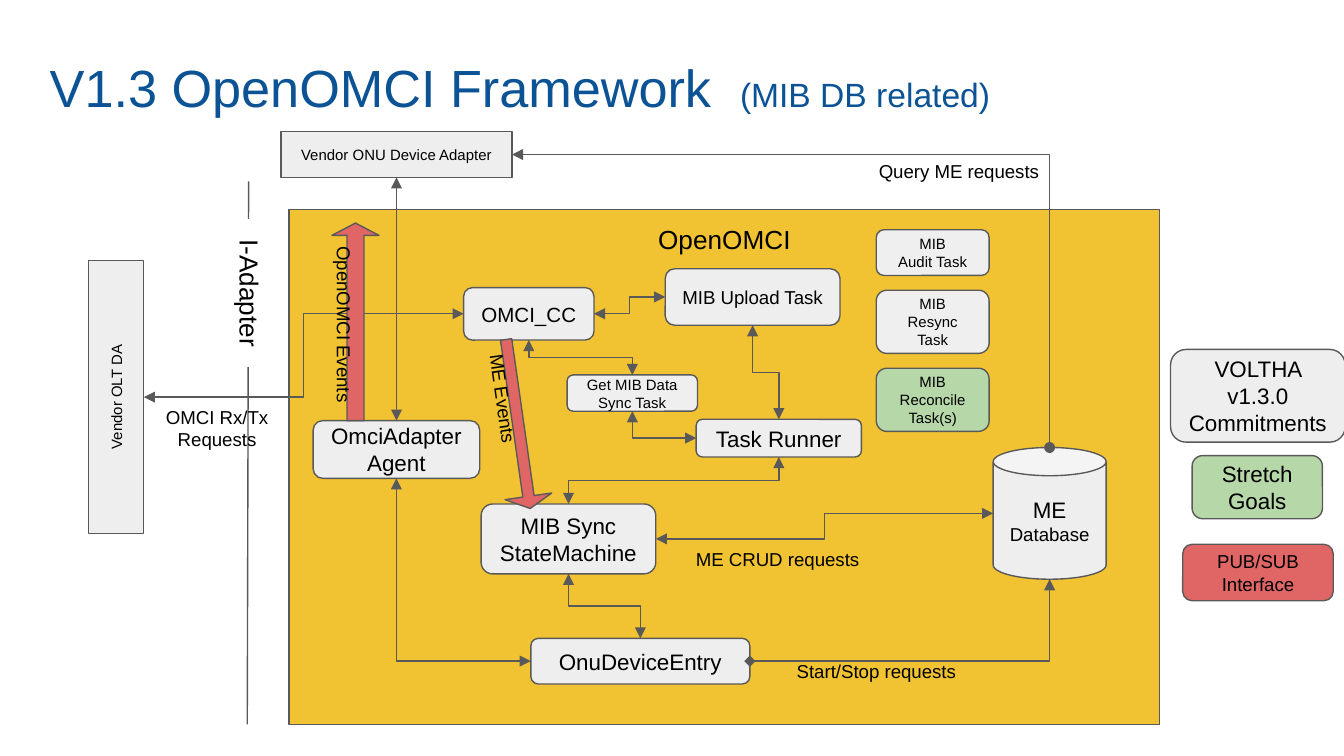
from typing import NamedTuple

from lxml import etree
from pptx import Presentation
from pptx import util as u
from pptx.dml.color import RGBColor
from pptx.enum import shapes, text
from pptx.oxml.ns import qn

COLS, ROWS = 100, 56.25
CELL = u.Inches(0.1)
FONT = "Arial"
COLORS = {"ink": "000000", "title": "0B5394", "line": "595959", "panel": "F1C232",
          "grey": "EEEEEE", "task": "EFEFEF", "stretch": "B6D7A8",
          "pubsub": "E06666", "paper": "FFFFFF"}
KIND = shapes.MSO_SHAPE
ROUND = KIND.ROUNDED_RECTANGLE
ALIGN = text.PP_ALIGN
MIDDLE, TOP = text.MSO_ANCHOR.MIDDLE, text.MSO_ANCHOR.TOP
SIDES = "TLBR"
SITE_SHIFT = {"database": 1, "olt": -1}  # can has an extra site, olt is turned


class Box(NamedTuple):
    """Position and size are grid columns and rows."""
    name: str
    col: float
    row: float
    cols: float
    rows: float
    text: str
    size: float
    fill: str = "grey"
    kind: int = ROUND
    turn: float = 0
    anchor: int = MIDDLE
    align: int = ALIGN.CENTER
    outline: bool = True


class Link(NamedTuple):
    begin: str
    begin_side: str
    end: str
    end_side: str
    head: str = "triangle"
    tail: str = "triangle"


class Label(NamedTuple):
    col: float
    row: float
    cols: float
    rows: float
    text: str
    align: int = ALIGN.LEFT


TASK_COL, TASK_COLS = 65.2, 8.4
BOXES = [
    Box("panel", 21.5, 15.6, 64.8, 38.3, "OpenOMCI", 14, "panel", KIND.RECTANGLE, anchor=TOP),
    Box("vendor", 20.9, 9.8, 17.2, 3.4, "Vendor ONU Device Adapter", 8, kind=KIND.RECTANGLE),
    Box("olt", -1.5, 27.5, 20.3, 4.1, "Vendor OLT DA", 8, kind=KIND.RECTANGLE, turn=270),
    Box("sync", 35.8, 37.5, 13, 5.2, "MIB Sync StateMachine", 12),
    Box("entry", 39.5, 47.5, 16.3, 3.4, "OnuDeviceEntry", 12),
    Box("runner", 51.8, 31.2, 12.3, 2.8, "Task Runner", 12),
    Box("upload", 49.5, 20, 13, 4.2, "MIB Upload Task", 10),
    Box("database", 73.9, 33.3, 8.4, 9.8, "ME ", 12, kind=KIND.CAN),
    Box("omci_cc", 34.5, 21.4, 9.7, 3.9, "OMCI_CC", 11),
    Box("get_sync", 42.2, 27.9, 9.7, 2.7, "Get MIB Data Sync Task", 8, "task"),
    Box("agent", 23.3, 31.3, 12.4, 4.3, "OmciAdapterAgent", 12),
    Box("audit", TASK_COL, 17.1, TASK_COLS, 3.4, "MIB\nAudit Task", 8, "task"),
    Box("resync", TASK_COL, 21.6, TASK_COLS, 4.7, "MIB\nResync Task", 8, "task"),
    Box("reconcile", TASK_COL, 27.4, TASK_COLS, 4.7, "MIB\nReconcile Task(s)", 8, "stretch"),
    Box("commitments", 87.1, 26, 13, 6.9, "VOLTHA v1.3.0 Commitments", 12),
    Box("stretch", 88.7, 33.9, 9.7, 4.7, "Stretch\nGoals", 12, "stretch"),
    Box("pubsub", 88, 40.5, 11.2, 4.2, "PUB/SUB Interface", 10, "pubsub"),
]
LINKS = [
    Link("upload", "L", "omci_cc", "R"),
    Link("sync", "R", "database", "L"),
    Link("entry", "T", "sync", "B"),
    Link("entry", "L", "agent", "B"),
    Link("runner", "B", "sync", "T"),
    Link("vendor", "R", "database", "T", tail="oval"),
    Link("entry", "R", "database", "B", head="diamond"),
    Link("upload", "B", "runner", "T"),
    Link("olt", "R", "omci_cc", "L"),
    Link("get_sync", "B", "runner", "L"),
    Link("omci_cc", "B", "get_sync", "T"),
    Link("vendor", "B", "agent", "T"),
]
INTERFACE = Box("interface", 13.1, 20, 11, 3.6, "I-Adapter", 14, "paper",
                KIND.RECTANGLE, 90, outline=False)
ME_EVENTS = Box("me_events", 32.2, 29.8, 12.7, 3.5, "ME Events", 10, "pubsub",
                KIND.RIGHT_ARROW, 81.9, TOP, ALIGN.LEFT)
OMCI_EVENTS = Box("omci_events", 19.1, 22.2, 14.7, 3.5, "OpenOMCI Events", 10, "pubsub",
                  KIND.RIGHT_ARROW, 90, TOP, ALIGN.LEFT)
LABELS = [
    Label(64.4, 10.9, 14.9, 3.4, "Query ME requests"),
    Label(50.8, 39.8, 20, 3.4, "ME CRUD requests"),
    Label(58.3, 48.1, 20, 3.4, "Start/Stop requests"),
    Label(10, 29.2, 12.3, 6, "OMCI Rx/Tx\nRequests", ALIGN.CENTER),
]


def grid(*cells: float) -> list[int]:
    return [round(c * CELL) for c in cells]


def rgb(name: str) -> RGBColor:
    return RGBColor.from_string(COLORS[name])


def add_run(p, words: str, size: float, color: str = "ink") -> None:
    r = p.add_run()
    r.text = words
    r.font.name, r.font.size = FONT, u.Pt(size)
    r.font.color.rgb = rgb(color)


def set_frame(tf, anchor: int) -> None:
    tf.word_wrap = True
    tf.auto_size = text.MSO_AUTO_SIZE.NONE
    tf.vertical_anchor = anchor
    tf.margin_left = tf.margin_right = tf.margin_top = tf.margin_bottom = CELL


def write(tf, words: str, size: float, align: int, anchor: int) -> None:
    set_frame(tf, anchor)
    for i, line in enumerate(words.split("\n")):
        p = tf.add_paragraph() if i else tf.paragraphs[0]
        p.alignment = align
        add_run(p, line, size)


def draw_box(s, box: Box):
    sp = s.shapes.add_shape(box.kind, *grid(box.col, box.row, box.cols, box.rows))
    sp.shadow.inherit = False
    sp.rotation = box.turn
    sp.fill.solid()
    sp.fill.fore_color.rgb = rgb(box.fill)
    if box.outline:
        sp.line.color.rgb, sp.line.width = rgb("line"), u.Pt(0.75)
    else:
        sp.line.fill.background()
    write(sp.text_frame, box.text, box.size, box.align, box.anchor)
    return sp


def draw_label(s, label: Label) -> None:
    sp = s.shapes.add_textbox(*grid(label.col, label.row, label.cols, label.rows))
    write(sp.text_frame, label.text, 10, label.align, TOP)


def side_point(sp, side: str) -> tuple[int, int]:
    """Middle of a side as seen after the shape's quarter turns."""
    w, h = (sp.height, sp.width) if sp.rotation % 180 == 90 else (sp.width, sp.height)
    x, y = sp.left + sp.width // 2, sp.top + sp.height // 2
    dx, dy = {"T": (0, -1), "L": (-1, 0), "B": (0, 1), "R": (1, 0)}[side]
    return x + dx * w // 2, y + dy * h // 2


def style_line(c, head: str = "none", tail: str = "none") -> None:
    c.line.color.rgb, c.line.width = rgb("line"), u.Pt(0.75)
    ln = c.line._get_or_add_ln()
    etree.SubElement(ln, qn("a:headEnd"), type=head)
    etree.SubElement(ln, qn("a:tailEnd"), type=tail)
    etree.SubElement(c._element.spPr, qn("a:effectLst"))


def bend(c, start: tuple[int, int], end: tuple[int, int], link: Link) -> None:
    """Route an elbow; one that leaves vertically is turned by 90 degrees."""
    (x1, y1), (x2, y2) = start, end
    w, h = abs(x2 - x1), abs(y2 - y1)
    vertical = link.begin_side in "TB"
    one_corner = vertical != (link.end_side in "TB")
    spPr = c._element.spPr
    spPr.find(qn("a:prstGeom")).set("prst", "bentConnector2" if one_corner else "bentConnector3")
    xfrm = spPr.xfrm
    xfrm.flipH, xfrm.flipV = (y2 < y1, x2 > x1) if vertical else (x2 < x1, y2 < y1)
    if vertical:
        xfrm.rot = 90
        w, h = h, w
    c.left, c.top = (x1 + x2 - w) // 2, (y1 + y2 - h) // 2
    c.width, c.height = w, h


def draw_link(s, link: Link, drawn: dict) -> None:
    a, b = drawn[link.begin], drawn[link.end]
    start, end = side_point(a, link.begin_side), side_point(b, link.end_side)
    straight = start[0] == end[0]
    kind = shapes.MSO_CONNECTOR.STRAIGHT if straight else shapes.MSO_CONNECTOR.ELBOW
    c = s.shapes.add_connector(kind, *start, *end)
    c.begin_connect(a, SIDES.index(link.begin_side) + SITE_SHIFT.get(link.begin, 0))
    c.end_connect(b, SIDES.index(link.end_side) + SITE_SHIFT.get(link.end, 0))
    if not straight:
        bend(c, start, end, link)
    style_line(c, link.head, link.tail)


def draw_title(s) -> None:
    title = s.shapes.title
    title.left, title.top, title.width, title.height = grid(2.7, 3.1, 93.2, 6.3)
    set_frame(title.text_frame, TOP)
    p = title.text_frame.paragraphs[0]
    p.alignment = ALIGN.LEFT
    add_run(p, "V1.3 OpenOMCI Framework  ", 28, "title")
    add_run(p, "(MIB DB related)", 18, "title")


def main() -> None:
    prs = Presentation()
    prs.slide_width, prs.slide_height = grid(COLS, ROWS)
    s = prs.slides.add_slide(prs.slide_layouts[5])
    draw_title(s)
    drawn = {box.name: draw_box(s, box) for box in BOXES}
    add_run(drawn["database"].text_frame.paragraphs[0], "Database", 10)
    divider = s.shapes.add_connector(shapes.MSO_CONNECTOR.STRAIGHT, *grid(18.5, 13.5, 18.4, 53.9))
    style_line(divider)
    draw_box(s, INTERFACE)
    for link in LINKS:
        draw_link(s, link, drawn)
    me_events = draw_box(s, ME_EVENTS)
    me_events.adjustments[0], me_events.adjustments[1] = 0.24, 0.26
    omci_events = draw_box(s, OMCI_EVENTS)
    omci_events.adjustments[0], omci_events.adjustments[1] = 0.36, 0.26
    omci_events._element.spPr.xfrm.flipH = True
    omci_events.text_frame.margin_left = u.Inches(0.14)
    for label in LABELS:
        draw_label(s, label)
    prs.save("out.pptx")


if __name__ == "__main__":
    main()
